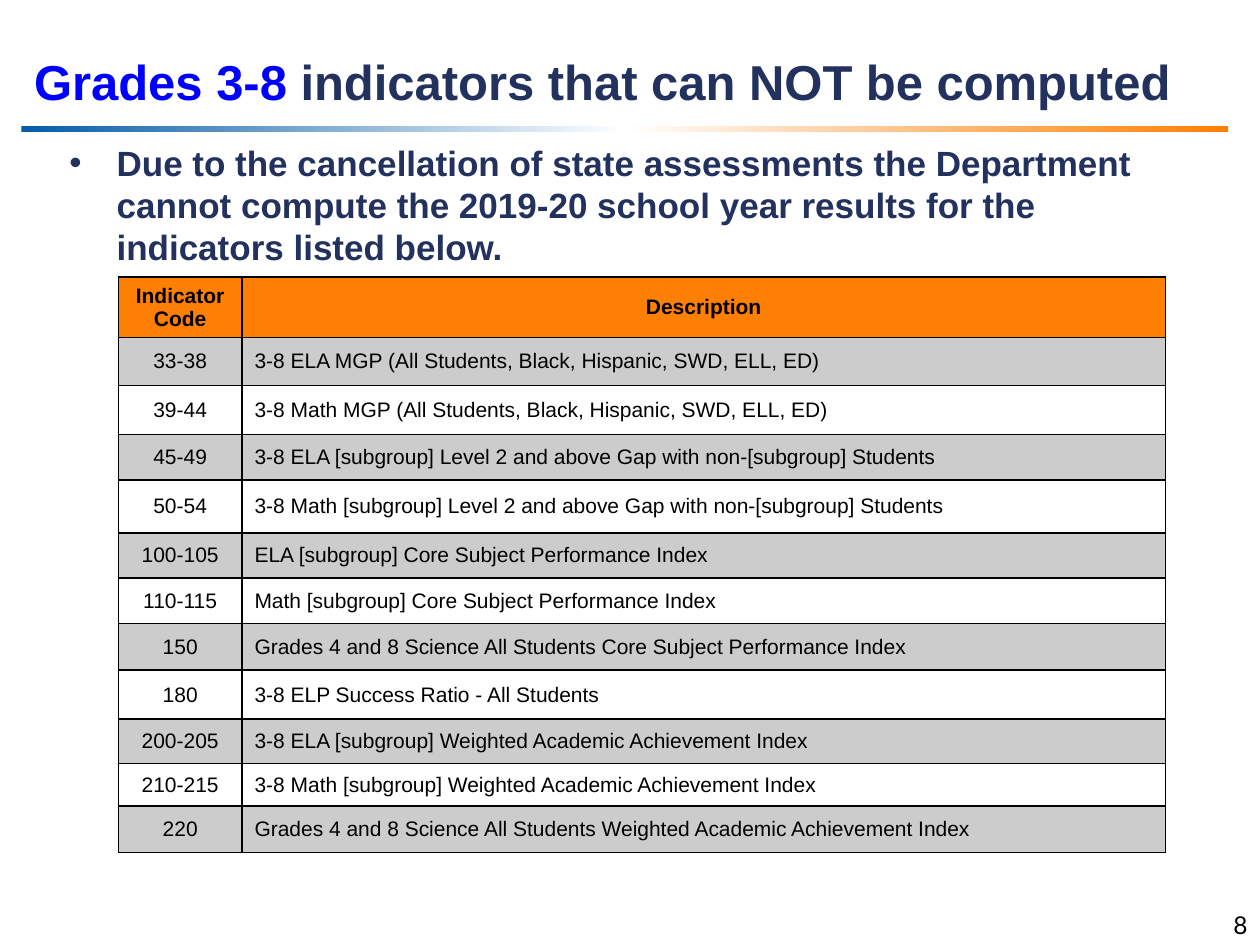
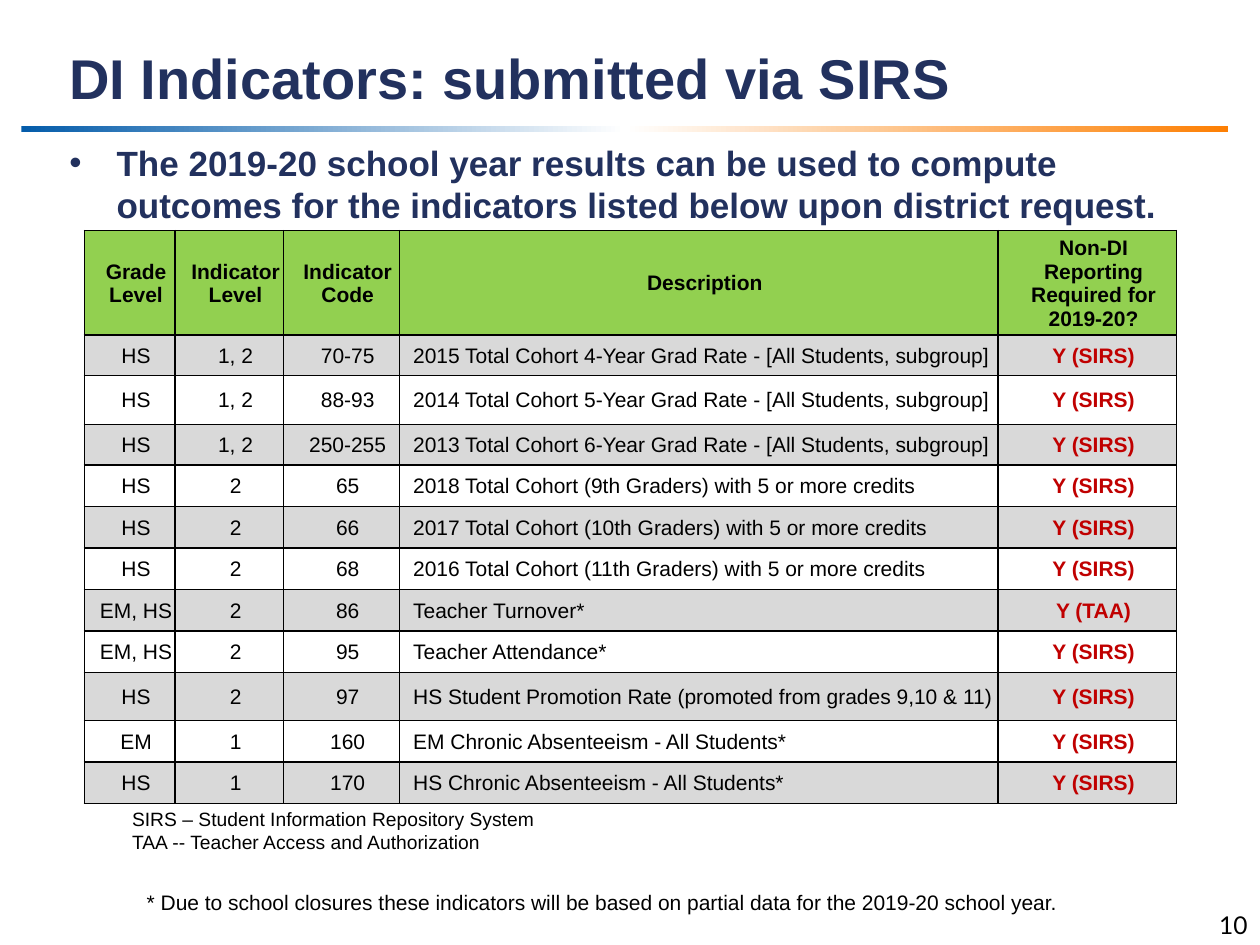
from copy import deepcopy
from typing import NamedTuple

from lxml import etree
from pptx import Presentation
from pptx import util as u
from pptx.dml.color import RGBColor
from pptx.enum import shapes, text
from pptx.oxml import ns

EMU_PER_PX = 9144
NAVY, BLUE, BLACK, RED = "22315E", "0000FF", "000000", "C00000"
ORANGE, GREEN = "FD7F03", "92D050"
RULE_COLOURS = ("045CAA", "FFFFFF", ORANGE)
BODY_FONT, NUMBER_FONT = "Arial", "Lato"
LEFT, CENTRE, RIGHT = text.PP_ALIGN.LEFT, text.PP_ALIGN.CENTER, text.PP_ALIGN.RIGHT


class Box(NamedTuple):
    left: int
    top: int
    width: int
    height: int


class Run(NamedTuple):
    words: str
    size: int
    colour: str = BLACK
    bold: bool = False
    font: str = BODY_FONT


class Note(NamedTuple):
    box: Box
    size: int
    lines: tuple[str, ...]


class Grid(NamedTuple):
    left: int
    top: int
    columns: tuple[int, ...]
    row_heights: tuple[int, ...]
    insets: tuple[int, int, int, int]
    header_fill: str
    stripe_fill: str
    description_column: int
    answer_column: int | None
    rows: tuple[tuple[str, ...], ...]


class IndicatorSlide(NamedTuple):
    number: str
    title_box: Box
    title: tuple[Run, ...]
    summary_box: Box
    summary: str
    grid: Grid
    notes: tuple[Note, ...] = ()


COMPUTED_NOT = IndicatorSlide(
    number="8",
    title_box=Box(17, 0, 983, 93),
    title=(Run("Grades 3-8 ", 28, BLUE, True),
           Run("indicators that can NOT be computed", 28, NAVY, True)),
    summary_box=Box(45, 107, 923, 111),
    summary="Due to the cancellation of state assessments the Department cannot compute "
            "the 2019-20 school year results for the indicators listed below.",
    grid=Grid(
        left=94, top=220, columns=(98, 733),
        row_heights=(48, 38, 39, 36, 42, 36, 36, 37, 39, 35, 34, 37),
        insets=(10, 5, 10, 5), header_fill=ORANGE, stripe_fill="CCCCCC",
        description_column=1, answer_column=None,
        rows=(
            ("Indicator Code", "Description"),
            ("33-38", "3-8 ELA MGP (All Students, Black, Hispanic, SWD, ELL, ED)"),
            ("39-44", "3-8 Math MGP (All Students, Black, Hispanic, SWD, ELL, ED)"),
            ("45-49", "3-8 ELA [subgroup] Level 2 and above Gap with non-[subgroup] Students"),
            ("50-54", "3-8 Math [subgroup] Level 2 and above Gap with non-[subgroup] Students"),
            ("100-105", "ELA [subgroup] Core Subject Performance Index"),
            ("110-115", "Math [subgroup] Core Subject Performance Index"),
            ("150", "Grades 4 and 8 Science All Students Core Subject Performance Index"),
            ("180", "3-8 ELP Success Ratio - All Students"),
            ("200-205", "3-8 ELA [subgroup] Weighted Academic Achievement Index"),
            ("210-215", "3-8 Math [subgroup] Weighted Academic Achievement Index"),
            ("220", "Grades 4 and 8 Science All Students Weighted Academic Achievement Index"),
        ),
    ),
)

SUBMITTED = IndicatorSlide(
    number="10",
    title_box=Box(45, 0, 843, 93),
    title=(Run("DI Indicators: submitted via SIRS", 32, NAVY, True),),
    summary_box=Box(45, 107, 923, 77),
    summary="The 2019-20 school year results can be used to compute outcomes for the "
            "indicators listed below upon district request.",
    grid=Grid(
        left=67, top=183, columns=(72, 86, 92, 475, 142),
        row_heights=(83, 32, 39, 32, 33, 33, 33, 33, 33, 38, 33, 33),
        insets=(11, 1, 1, 0), header_fill=GREEN, stripe_fill="D9D9D9",
        description_column=3, answer_column=4,
        rows=(
            ("Grade Level", "Indicator Level", "Indicator Code", "Description",
             "Non-DI Reporting Required for 2019-20?"),
            ("HS", "1, 2", "70-75",
             "2015 Total Cohort 4-Year Grad Rate - [All Students, subgroup]", "Y (SIRS)"),
            ("HS", "1, 2", "88-93",
             "2014 Total Cohort 5-Year Grad Rate - [All Students, subgroup]", "Y (SIRS)"),
            ("HS", "1, 2", "250-255",
             "2013 Total Cohort 6-Year Grad Rate - [All Students, subgroup]", "Y (SIRS)"),
            ("HS", "2", "65",
             "2018 Total Cohort (9th Graders) with 5 or more credits", "Y (SIRS)"),
            ("HS", "2", "66",
             "2017 Total Cohort (10th Graders) with 5 or more credits", "Y (SIRS)"),
            ("HS", "2", "68",
             "2016 Total Cohort (11th Graders) with 5 or more credits", "Y (SIRS)"),
            ("EM, HS", "2", "86", "Teacher Turnover*", "Y (TAA)"),
            ("EM, HS", "2", "95", "Teacher Attendance*", "Y (SIRS)"),
            ("HS", "2", "97",
             "HS Student Promotion Rate (promoted from grades 9,10 & 11)", "Y (SIRS)"),
            ("EM", "1", "160", "EM Chronic Absenteeism - All Students*", "Y (SIRS)"),
            ("HS", "1", "170", "HS Chronic Absenteeism - All Students*", "Y (SIRS)"),
        ),
    ),
    notes=(
        Note(Box(95, 636, 860, 47), 11,
             ("SIRS – Student Information Repository System",
              "TAA -- Teacher Access and Authorization")),
        Note(Box(102, 701, 860, 30), 12,
             (" * Due to school closures these indicators will be based on partial data "
              "for the 2019-20 school year.",)),
    ),
)


def px(length: int) -> u.Emu:
    return u.Emu(length * EMU_PER_PX)


def rgb(colour: str) -> RGBColor:
    return RGBColor.from_string(colour)


def emu_box(box: Box) -> tuple[u.Emu, ...]:
    return tuple(px(length) for length in box)


def add_run(paragraph, run: Run) -> None:
    piece = paragraph.add_run()
    piece.text = run.words
    piece.font.name = run.font
    piece.font.size = u.Pt(run.size)
    piece.font.bold = run.bold
    piece.font.color.rgb = rgb(run.colour)


def fill_placeholder(holder, box: Box, runs: tuple[Run, ...], leading: int, anchor) -> None:
    holder.left, holder.top, holder.width, holder.height = emu_box(box)
    frame = holder.text_frame
    frame.auto_size = text.MSO_AUTO_SIZE.NONE
    frame.vertical_anchor = anchor
    paragraph = frame.paragraphs[0]
    paragraph.alignment = LEFT
    paragraph.space_before = u.Pt(0)
    paragraph.line_spacing = u.Pt(leading)
    for run in runs:
        add_run(paragraph, run)


def add_lines(slide, box: Box, lines: tuple[Run, ...], alignment=LEFT) -> None:
    frame = slide.shapes.add_textbox(*emu_box(box)).text_frame
    frame.word_wrap = True
    paragraph = frame.paragraphs[0]
    paragraph.alignment = alignment
    for index, line in enumerate(lines):
        if index:
            paragraph.add_line_break()
        add_run(paragraph, line)


def add_title_rule(slide) -> None:
    rule = slide.shapes.add_shape(shapes.MSO_SHAPE.RECTANGLE, *emu_box(Box(17, 100, 958, 5)))
    rule.shadow.inherit = False
    rule.line.fill.background()
    rule.fill.gradient()
    rule.fill.gradient_angle = 0
    stops = rule._element.find(".//" + ns.qn("a:gsLst"))
    stops.append(deepcopy(stops[0]))
    for index, (stop, colour) in enumerate(zip(rule.fill.gradient_stops, RULE_COLOURS)):
        stop.position = index / 2
        stop.color.rgb = rgb(colour)


def add_borders(cell) -> None:
    properties = cell._tc.get_or_add_tcPr()
    for index, side in enumerate(("lnL", "lnR", "lnT", "lnB")):
        border = etree.Element(ns.qn(f"a:{side}"), w=str(u.Pt(1)))
        ink = etree.SubElement(border, ns.qn("a:solidFill"))
        etree.SubElement(ink, ns.qn("a:srgbClr"), val=BLACK)
        properties.insert(index, border)


def format_cell(cell, grid: Grid, row: int, column: int) -> None:
    is_header = row == 0
    is_answer = not is_header and column == grid.answer_column
    is_description = not is_header and column == grid.description_column
    (cell.margin_left, cell.margin_top,
     cell.margin_right, cell.margin_bottom) = map(px, grid.insets)
    cell.vertical_anchor = text.MSO_ANCHOR.MIDDLE
    if is_header or row % 2:
        cell.fill.solid()
        cell.fill.fore_color.rgb = rgb(grid.header_fill if is_header else grid.stripe_fill)
    else:
        cell.fill.background()
    add_borders(cell)
    paragraph = cell.text_frame.paragraphs[0]
    paragraph.alignment = LEFT if is_description else CENTRE
    add_run(paragraph, Run(grid.rows[row][column], 12,
                           RED if is_answer else BLACK, is_header or is_answer))


def add_grid(slide, grid: Grid) -> None:
    box = Box(grid.left, grid.top, sum(grid.columns), sum(grid.row_heights))
    table = slide.shapes.add_table(len(grid.rows), len(grid.columns), *emu_box(box)).table
    table.first_row = table.horz_banding = False
    for column, width in zip(table.columns, grid.columns):
        column.width = px(width)
    for row, height in zip(table.rows, grid.row_heights):
        row.height = px(height)
    for row in range(len(grid.rows)):
        for column in range(len(grid.columns)):
            format_cell(table.cell(row, column), grid, row, column)


def add_indicator_slide(deck, content: IndicatorSlide) -> None:
    slide = deck.slides.add_slide(deck.slide_layouts[1])
    add_title_rule(slide)
    fill_placeholder(slide.shapes.title, content.title_box, content.title, 36,
                     text.MSO_ANCHOR.BOTTOM)
    fill_placeholder(slide.placeholders[1], content.summary_box,
                     (Run(content.summary, 20, NAVY, True),), 24, text.MSO_ANCHOR.TOP)
    add_grid(slide, content.grid)
    for note in content.notes:
        add_lines(slide, note.box, tuple(Run(line, note.size) for line in note.lines))
    add_lines(slide, Box(767, 717, 233, 33),
              (Run(content.number, 14, font=NUMBER_FONT),), RIGHT)


def main() -> None:
    deck = Presentation()
    deck.slide_width, deck.slide_height = px(1000), px(750)
    for content in (COMPUTED_NOT, SUBMITTED):
        add_indicator_slide(deck, content)
    deck.save("out.pptx")


if __name__ == "__main__":
    main()
